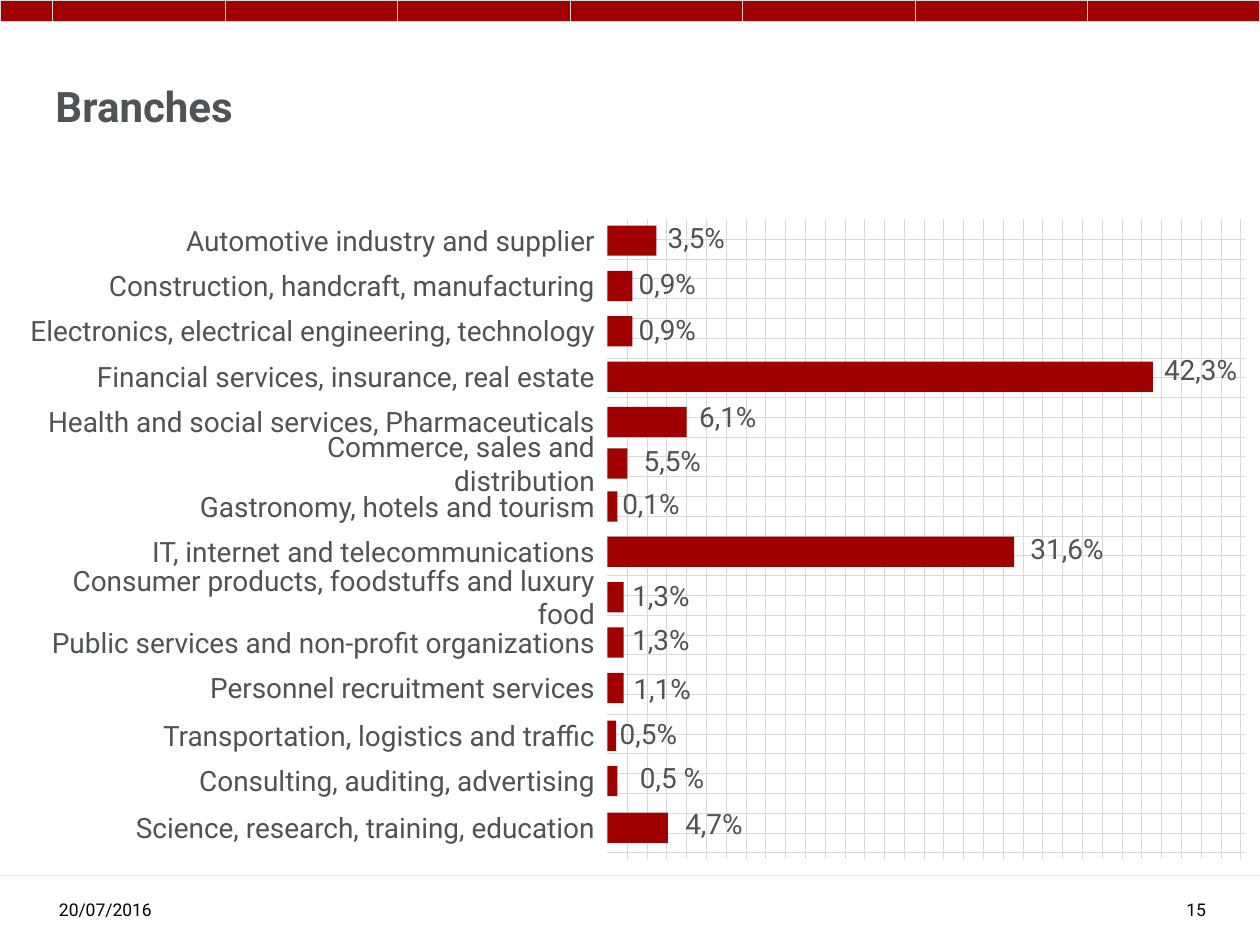
from lxml import etree
from pptx import Presentation
from pptx import util as u
from pptx.dml.color import RGBColor
from pptx.enum import dml, shapes, text
from pptx.oxml.ns import qn

HUES = {"red": "A00000", "grid": "D9D9D9", "rule": "E3E4E5",
        "gray": "4F5355", "black": "000000", "white": "FFFFFF"}
FONT = "Roboto"
LEFT, THICK = 4.82, 0.24  # where bars start, and their height

# label, bar top, bar width, value, value left, value top
ROWS = [
    ("Automotive industry and supplier", 1.79, 0.39, "3,5%", 5.2, 1.7),
    ("Construction, handcraft, manufacturing", 2.15, 0.2, "0,9%", 4.97, 2.07),
    ("Electronics, electrical engineering, technology", 2.51, 0.2, "0,9%", 4.97, 2.43),
    ("Financial services, insurance, real estate", 2.87, 4.33, "42,3%", 9.14, 2.75),
    ("Health and social services, Pharmaceuticals", 3.23, 0.63, "6,1%", 5.45, 3.12),
    ("Commerce, sales and distribution", 3.56, 0.16, "5,5%", 5.01, 3.47),
    ("Gastronomy, hotels and tourism", 3.9, 0.08, "0,1%", 4.84, 3.81),
    ("IT, internet and telecommunications", 4.26, 3.23, "31,6%", 8.08, 4.17),
    ("Consumer products, foodstuffs and luxury food", 4.62, 0.13, "1,3%", 4.92, 4.54),
    ("Public services and non-profit organizations", 4.98, 0.13, "1,3%", 4.92, 4.89),
    ("Personnel recruitment services", 5.34, 0.13, "1,1%", 4.93, 5.28),
    ("Transportation, logistics and traffic", 5.72, 0.07, "0,5%", 4.82, 5.64),
    ("Consulting, auditing, advertising", 6.08, 0.08, "0,5 %", 4.98, 5.99),
    ("Science, research, training, education", 6.45, 0.48, "4,7%", 5.34, 6.35),
]


class Deck:
    def __init__(self):
        self.prs = Presentation()
        self.prs.slide_width, self.prs.slide_height = u.Inches(10), u.Inches(7.5)
        self.slide = self.prs.slides.add_slide(self.prs.slide_layouts[5])

    def hue(self, name):
        return RGBColor.from_string(HUES[name])

    def style(self, frame, words, size, hue, bold=False, align="LEFT", anchor="TOP"):
        frame.word_wrap = True
        frame.auto_size = text.MSO_AUTO_SIZE.NONE
        frame.vertical_anchor = text.MSO_ANCHOR[anchor]
        frame.text = words
        par = frame.paragraphs[0]
        par.alignment = text.PP_ALIGN[align]
        par.font.name, par.font.size, par.font.bold = FONT, u.Pt(size), bold
        par.font.color.rgb = self.hue(hue)

    def title(self, words, *box):
        shape = self.slide.shapes.title
        shape.left, shape.top, shape.width, shape.height = map(u.Inches, box)
        self.style(shape.text_frame, words, 24, "gray", bold=True)

    def text(self, words, *box, size=16, hue="gray", **how):
        shape = self.slide.shapes.add_textbox(*map(u.Inches, box))
        self.style(shape.text_frame, words, size, hue, **how)

    def rect(self, *box, line=None):
        shape = self.slide.shapes.add_shape(shapes.MSO_SHAPE.RECTANGLE, *map(u.Inches, box))
        shape.shadow.inherit = False
        shape.fill.solid()
        shape.fill.fore_color.rgb = self.hue("red")
        if line:
            shape.line.color.rgb = self.hue(line)
            shape.line.width = u.Pt(0.5)
        else:
            shape.line.fill.background()
        return shape

    def grid(self, *box):
        fill = self.rect(*box).fill
        fill.patterned()
        fill.pattern = dml.MSO_PATTERN.DOTTED_GRID
        fill.fore_color.rgb = self.hue("grid")
        fill.back_color.rgb = self.hue("white")

    def rule(self, *ends):
        line = self.slide.shapes.add_connector(
            shapes.MSO_CONNECTOR.STRAIGHT, *map(u.Inches, ends))
        line.line.color.rgb = self.hue("rule")
        line.line.width = u.Pt(0.5)
        etree.SubElement(line._element.spPr, qn("a:effectLst"))


def main():
    deck = Deck()

    # Top band: one short tile, then seven equal ones
    first, count = 0.42, 7
    step = (10 - first) / count
    for i in reversed(range(count)):
        deck.rect(first + i * step, 0, step, 0.17, line="grid")
    deck.rect(0, 0, first, 0.17, line="grid")

    # Title
    deck.title("Branches", 0.34, 0.59, 6.93, 0.95)

    # Bars on a grid, with labels and values
    deck.grid(LEFT, 1.74, 5.06, 5.08)
    for label, top, width, value, x, y in ROWS:
        wide = 3.48 if label.startswith("Commerce") else 4.8
        deck.text(label, LEFT - wide, top - 0.04, wide, 0.31, align="RIGHT", anchor="MIDDLE")
        deck.rect(LEFT, top, width, THICK)
        deck.text(value, x, y, 0.89, 0.37)

    # Footer
    deck.rule(0, 6.95, 10, 6.95)
    foot = dict(size=10, hue="black", anchor="BOTTOM")
    deck.text("20/07/2016", 0.37, 6.95, 1.1, 0.4, **foot)
    deck.text("15", 8.85, 6.95, 0.82, 0.4, align="RIGHT", **foot)

    deck.prs.save("out.pptx")


if __name__ == "__main__":
    main()
